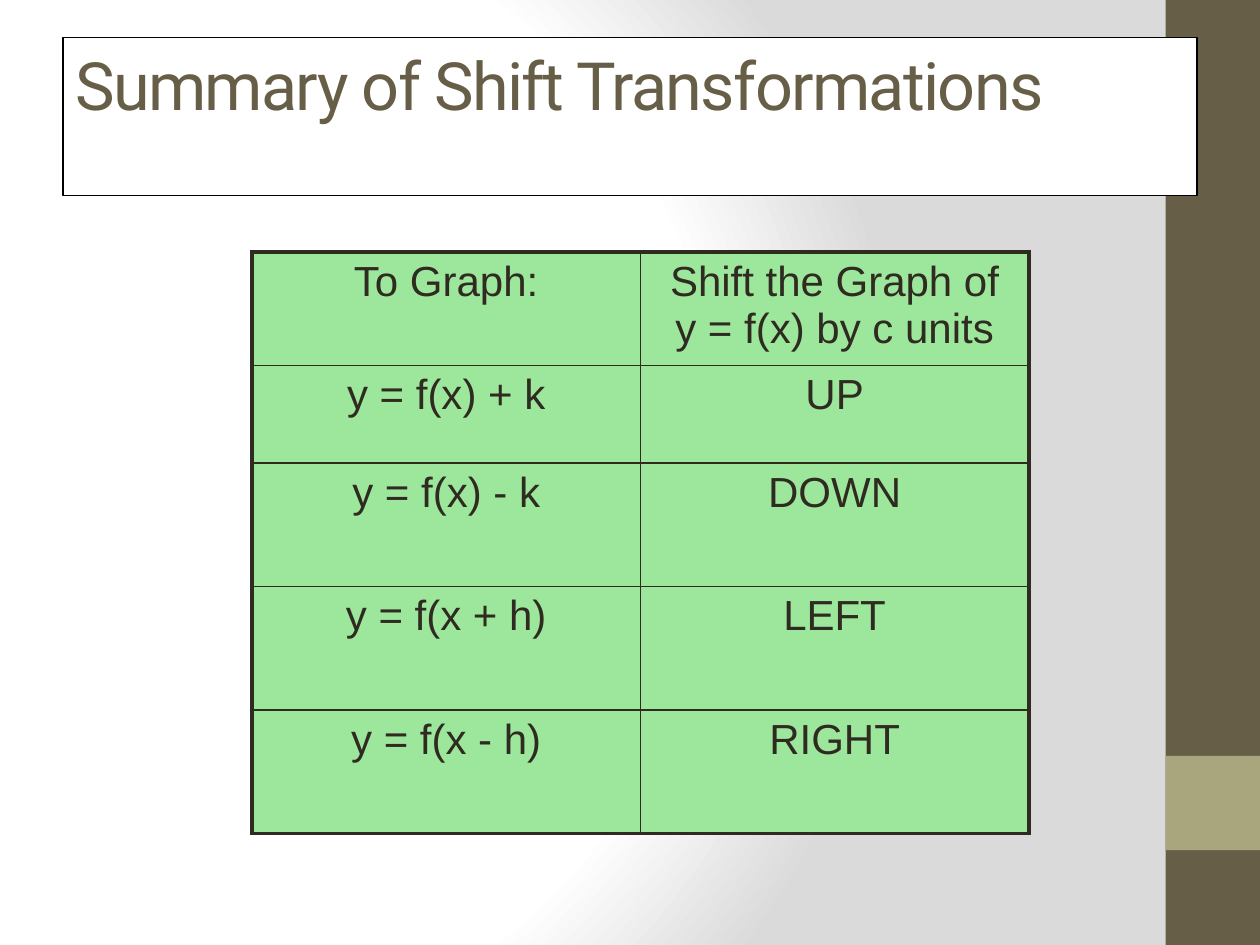
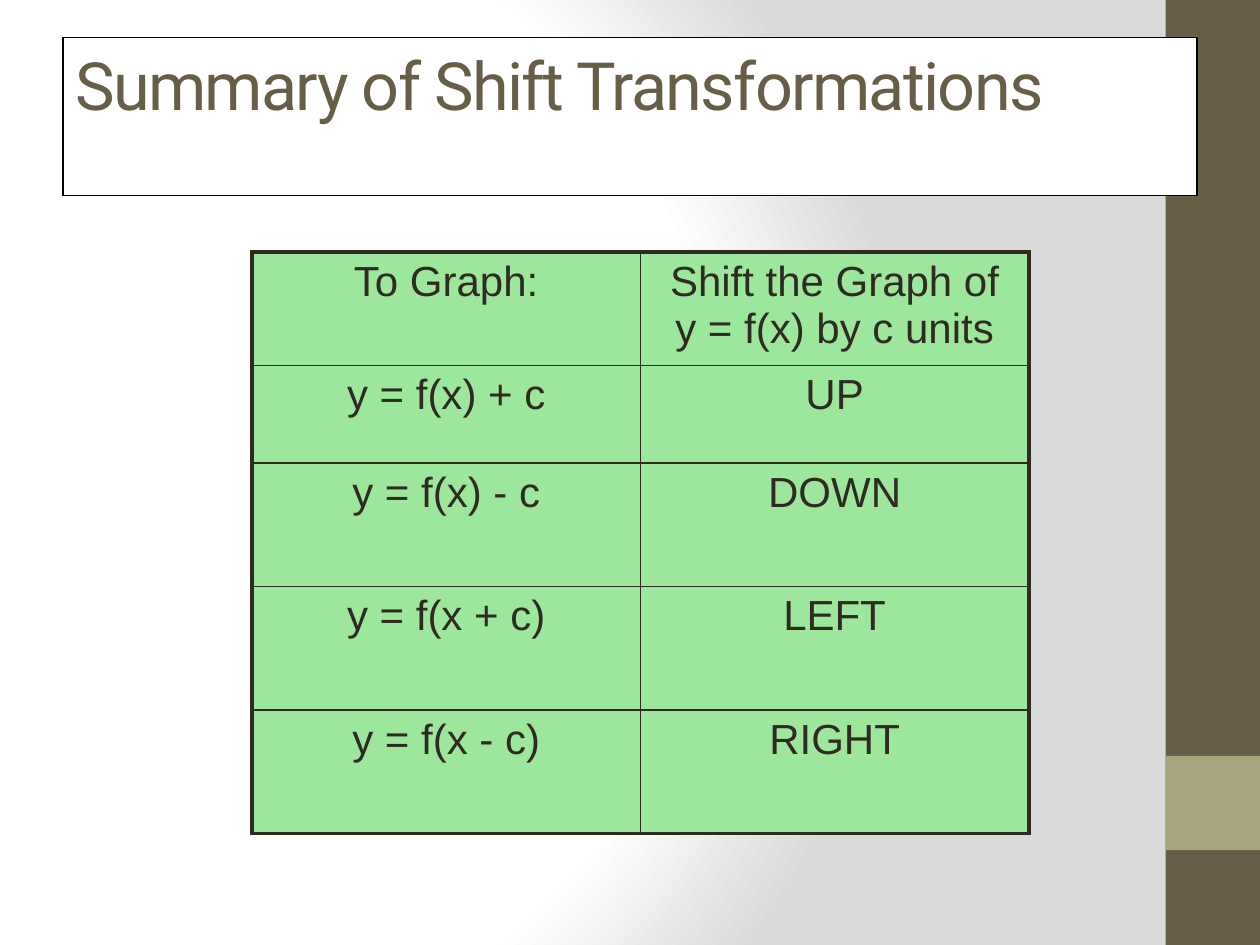
"""Build two slides that summarise the shift transformations of a graph."""
from dataclasses import dataclass

import lxml.etree
import pptx
import pptx.dml.color
import pptx.enum.shapes
import pptx.enum.text
import pptx.oxml
import pptx.oxml.ns
import pptx.presentation
import pptx.slide
import pptx.table
import pptx.util

Cm = pptx.util.Cm
Pt = pptx.util.Pt


@dataclass(frozen=True)
class Theme:
    olive: str = "675E47"
    sand: str = "A9A57C"
    ink: str = "2F2B20"
    green: str = "9DE79D"
    white: str = "FFFFFF"
    grey: str = "DADADA"
    black: str = "000000"
    title_font: str = "Roboto"
    table_font: str = "Arial"
    title_size: float = 38
    table_size: float = 24
    title_tracking: float = -1
    title_border: float = 0.75
    outer_border: float = 2.25
    inner_border: float = 1


@dataclass(frozen=True)
class Box:
    left: float
    top: float
    width: float
    height: float

    def lengths(self) -> tuple[Cm, Cm, Cm, Cm]:
        return Cm(self.left), Cm(self.top), Cm(self.width), Cm(self.height)


@dataclass(frozen=True)
class Band:
    box: Box
    color: str


@dataclass(frozen=True)
class Summary:
    vertical: str
    horizontal: str

    def rows(self) -> list[tuple[str, str]]:
        return [
            ("To Graph:", "Shift the Graph of\ny = f(x) by c units"),
            (f"y = f(x) + {self.vertical}", "UP"),
            (f"y = f(x) - {self.vertical}", "DOWN"),
            (f"y = f(x + {self.horizontal})", "LEFT"),
            (f"y = f(x - {self.horizontal})", "RIGHT"),
        ]


THEME = Theme()
SLIDE_WIDTH, SLIDE_HEIGHT = 25.4, 19.05
BAND_WIDTH = 1.9
BAND_LEFT = SLIDE_WIDTH - BAND_WIDTH
BANDS = (
    Band(Box(BAND_LEFT, 0, BAND_WIDTH, SLIDE_HEIGHT), THEME.olive),
    Band(Box(BAND_LEFT, 15.24, BAND_WIDTH, BAND_WIDTH), THEME.sand),
)
TITLE = "Summary of Shift Transformations"
TITLE_BOX = Box(1.27, 0.76, 22.86, 3.18)
ROW_HEIGHTS = (2.29, 1.96, 2.49, 2.49, 2.49)
COLUMN_WIDTH = 7.83
TABLE_BOX = Box(5.08, 5.08, 2 * COLUMN_WIDTH, sum(ROW_HEIGHTS))
SUMMARIES = (Summary("k", "h"), Summary("c", "c"))


def rgb(color: str) -> pptx.dml.color.RGBColor:
    return pptx.dml.color.RGBColor.from_string(color)


def paint_background(slide: pptx.slide.Slide) -> None:
    slide.background.fill.solid()
    properties = slide.element.find(".//" + pptx.oxml.ns.qn("p:bgPr"))
    stops = "".join(
        f'<a:gs pos="{percent * 1000}"><a:srgbClr val="{color}"/></a:gs>'
        for percent, color in ((0, THEME.white), (75, THEME.white), (100, THEME.grey))
    )
    gradient = pptx.oxml.parse_xml(
        f'<a:gradFill {pptx.oxml.ns.nsdecls("a")} rotWithShape="1"><a:gsLst>{stops}</a:gsLst>'
        '<a:path path="circle"><a:fillToRect l="20000" t="50000" r="100000" b="50000"/>'
        "</a:path></a:gradFill>"
    )
    properties.replace(properties[0], gradient)


def draw_band(slide: pptx.slide.Slide, band: Band) -> None:
    rectangle = pptx.enum.shapes.MSO_SHAPE.RECTANGLE
    shape = slide.shapes.add_shape(rectangle, *band.box.lengths())
    shape.shadow.inherit = False
    shape.fill.solid()
    shape.fill.fore_color.rgb = rgb(band.color)
    shape.line.fill.background()


def draw_title(slide: pptx.slide.Slide) -> None:
    shape = slide.shapes.add_textbox(*TITLE_BOX.lengths())
    shape.fill.solid()
    shape.fill.fore_color.rgb = rgb(THEME.white)
    shape.line.color.rgb = rgb(THEME.black)
    shape.line.width = Pt(THEME.title_border)
    shape.text_frame.word_wrap = True
    paragraph = shape.text_frame.paragraphs[0]
    run = paragraph.add_run()
    run.text = TITLE
    run.font.color.rgb = rgb(THEME.olive)
    run.font.name = THEME.title_font
    run.font.size = Pt(THEME.title_size)
    run.font._element.set("spc", str(int(THEME.title_tracking * 100)))


def set_borders(cell: pptx.table._Cell, outer_sides: dict[str, bool]) -> None:
    properties = cell._tc.get_or_add_tcPr()
    for index, (side, is_outer) in enumerate(outer_sides.items()):
        width = Pt(THEME.outer_border if is_outer else THEME.inner_border)
        line = pptx.oxml.parse_xml(
            f'<a:ln{side} {pptx.oxml.ns.nsdecls("a")} w="{width}"><a:solidFill>'
            f'<a:srgbClr val="{THEME.ink}"/></a:solidFill></a:ln{side}>'
        )
        properties.insert(index, line)


def fill_cell(cell: pptx.table._Cell, text: str) -> None:
    cell.fill.solid()
    cell.fill.fore_color.rgb = rgb(THEME.green)
    paragraph = cell.text_frame.paragraphs[0]
    paragraph.alignment = pptx.enum.text.PP_ALIGN.CENTER
    paragraph.font.name = THEME.table_font
    paragraph.font.size = Pt(THEME.table_size)
    paragraph.font.color.rgb = rgb(THEME.ink)
    for index, line in enumerate(text.splitlines()):
        if index:
            paragraph.add_line_break()
        paragraph.add_run().text = line


def draw_table(slide: pptx.slide.Slide, rows: list[tuple[str, str]]) -> None:
    last_row, last_column = len(rows) - 1, len(rows[0]) - 1
    frame = slide.shapes.add_table(len(rows), len(rows[0]), *TABLE_BOX.lengths())
    table = frame.table
    table.first_row = False
    table.horz_banding = False
    for column in table.columns:
        column.width = Cm(COLUMN_WIDTH)
    for row_index, (height, texts) in enumerate(zip(ROW_HEIGHTS, rows)):
        table.rows[row_index].height = Cm(height)
        for column_index, text in enumerate(texts):
            cell = table.cell(row_index, column_index)
            fill_cell(cell, text)
            set_borders(cell, {
                "L": column_index == 0,
                "R": column_index == last_column,
                "T": row_index == 0,
                "B": row_index == last_row,
            })


def add_summary_slide(
    presentation: pptx.presentation.Presentation, summary: Summary
) -> None:
    slide = presentation.slides.add_slide(presentation.slide_layouts[6])
    paint_background(slide)
    for band in BANDS:
        draw_band(slide, band)
    draw_title(slide)
    draw_table(slide, summary.rows())


def main() -> None:
    presentation = pptx.Presentation()
    presentation.slide_width = Cm(SLIDE_WIDTH)
    presentation.slide_height = Cm(SLIDE_HEIGHT)
    for summary in SUMMARIES:
        add_summary_slide(presentation, summary)
    presentation.save("out.pptx")


if __name__ == "__main__":
    main()
